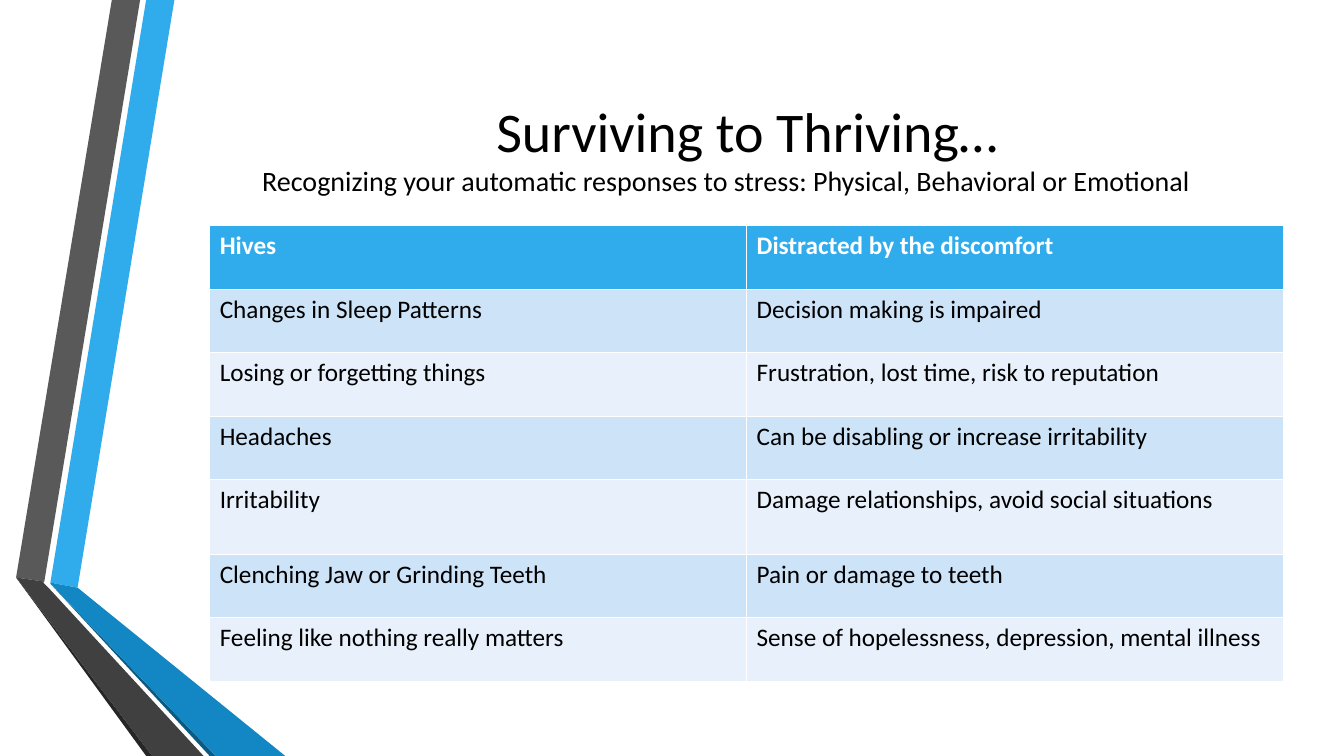
from pptx import Presentation
from pptx.dml.color import RGBColor
from pptx.enum.text import MSO_ANCHOR as Anchor, MSO_AUTO_SIZE as AutoSize, PP_ALIGN as Align
from pptx.oxml.ns import qn
from pptx.util import Inches, Pt
from lxml.etree import SubElement

COLORS = {
    "text": "000000", "header_text": "FFFFFF", "header": "30ACEC",
    "band_dark": "CDE3F8", "band_light": "E8F1FB",
    "blue": "30ACEC", "blue_fold": "1287C3", "blue_edge": "0C5A82",
    "gray": "595959", "gray_fold": "404040", "gray_edge": "262626",
}
FONT = "Calibri"
RIBBONS = [
    ("blue", [(0.5, 5.78), (0.77, 5.83), (1.73, 0), (1.45, 0)]),
    ("gray", [(1.39, 0), (1.11, 0), (0.16, 5.73), (0.44, 5.77)]),
    ("gray_edge", [(0.16, 5.73), (1.45, 7.5), (1.51, 7.5)]),
    ("blue_edge", [(0.5, 5.79), (2.08, 7.5), (2.14, 7.5)]),
    ("blue_fold", [(0.5, 5.79), (2.14, 7.5), (2.83, 7.5), (0.77, 5.83), (0.5, 5.78)]),
    ("gray_fold", [(2.02, 7.5), (0.48, 5.83), (0.43, 5.78), (0.44, 5.77),
                   (0.16, 5.73), (1.51, 7.5)]),
]
RESPONSES = [
    ("Hives", "Distracted by the discomfort"),
    ("Changes in Sleep Patterns", "Decision making is impaired"),
    ("Losing or forgetting things", "Frustration, lost time, risk to reputation"),
    ("Headaches", "Can be disabling or increase irritability"),
    ("Irritability", "Damage relationships, avoid social situations"),
    ("Clenching Jaw or Grinding Teeth", "Pain or damage to teeth"),
    ("Feeling like nothing really matters",
     "Sense of hopelessness, depression, mental illness"),
]
ROW_HEIGHTS = [0.63, 0.63, 0.63, 0.63, 0.74, 0.63, 0.63]


def rgb(name):
    return RGBColor.from_string(COLORS[name])


def write_text(paragraph, text, size, color="text", bold=False):
    run = paragraph.add_run()
    run.text = text
    for name, value in {"name": FONT, "size": Pt(size), "bold": bold}.items():
        setattr(run.font, name, value)
    run.font.color.rgb = rgb(color)


def add_ribbons(slide, left, top):
    """Draw the two folded ribbons, offset from the given corner."""
    for color, points in RIBBONS:
        corners = [(Inches(left + x), Inches(top + y)) for x, y in points]
        builder = slide.shapes.build_freeform(*corners[0], scale=1.0)
        builder.add_line_segments(corners[1:], close=True)
        shape = builder.convert_to_shape()
        shape.shadow.inherit = False
        shape.fill.solid()
        shape.fill.fore_color.rgb = rgb(color)
        shape.line.fill.background()


def fill_placeholder(shape, box, text, size, align, frame_format):
    for name, value in zip(("left", "top", "width", "height"), box):
        setattr(shape, name, Inches(value))
    frame = shape.text_frame
    common = {"word_wrap": True, "auto_size": AutoSize.NONE,
              "vertical_anchor": Anchor.MIDDLE}
    for name, value in {**common, **frame_format}.items():
        setattr(frame, name, value)
    paragraph = frame.paragraphs[0]
    paragraph.alignment = align
    paragraph.space_before = Pt(0)
    write_text(paragraph, text, size)
    return paragraph


def add_heading(slide, title_box, subtitle_box):
    fill_placeholder(slide.shapes.title, title_box, "Surviving to Thriving…",
                     40, Align.CENTER, {})
    subtitle = fill_placeholder(
        slide.placeholders[1], subtitle_box,
        "Recognizing your automatic responses to stress: Physical, Behavioral or Emotional",
        20, Align.LEFT, {"margin_bottom": Inches(0.57)})
    properties = subtitle._p.get_or_add_pPr()
    properties.set("marL", "0")
    properties.set("indent", "0")
    SubElement(properties, qn("a:buNone"))


def add_response_table(slide, left, top, width):
    frame = slide.shapes.add_table(len(RESPONSES), 2, Inches(left), Inches(top),
                                   Inches(width), Inches(sum(ROW_HEIGHTS)))
    table = frame.table
    for row_index, (texts, height) in enumerate(zip(RESPONSES, ROW_HEIGHTS)):
        table.rows[row_index].height = Inches(height)
        is_header = row_index == 0
        band = "band_dark" if row_index % 2 else "band_light"
        for column_index, text in enumerate(texts):
            cell = table.cell(row_index, column_index)
            cell.fill.solid()
            cell.fill.fore_color.rgb = rgb("header" if is_header else band)
            write_text(cell.text_frame.paragraphs[0], text, 18,
                       "header_text" if is_header else "text", is_header)


def main():
    presentation = Presentation()
    presentation.slide_width = Inches(13.33)
    presentation.slide_height = Inches(7.5)
    slide = presentation.slides.add_slide(presentation.slide_layouts[1])
    add_ribbons(slide, 0, 0)
    add_heading(slide, (1.93, 0.33, 10.96, 1.92), (2.5, 0.92, 10.8, 2.25))
    add_response_table(slide, 2.08, 2.24, 10.65)
    presentation.save("out.pptx")


if __name__ == "__main__":
    main()
